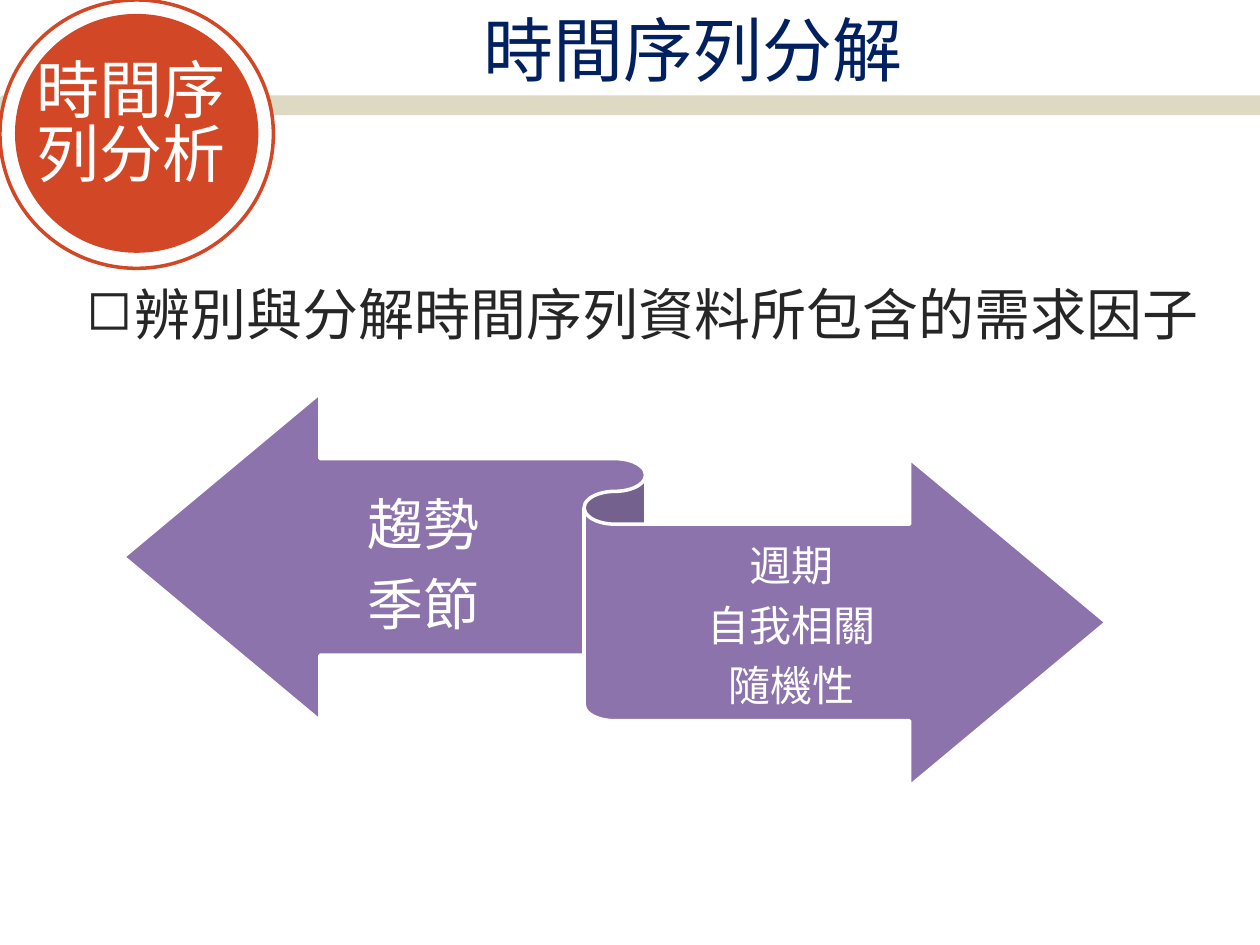
from dataclasses import dataclass

from lxml import etree
from pptx import Presentation
from pptx import util as u
from pptx.dml.color import RGBColor
from pptx.enum import shapes, text
from pptx.oxml.ns import qn


@dataclass(frozen=True)
class Theme:
    """Colours, fonts and type sizes of the slide."""
    white: str = "FFFFFF"
    navy: str = "002060"
    ink: str = "262626"
    purple: str = "8064A2"
    sand: str = "DDD9C3"
    orange: str = "D24726"
    cjk: str = "Noto Sans CJK SC"
    latin: str = "Calibri"
    title: int = 40
    badge: int = 36
    body: int = 32
    small: int = 24
    outline: int = 2


T = Theme()
WIDTH, HEIGHT = 10, 7.5


def part(box, x, y, w, h):
    """Return the box at the given shares of another box."""
    left, top, width, height = box
    return left + x * width, top + y * height, w * width, h * height


def add_text(slide, box, lines, *, size, color, font=T.cjk, align="LEFT", anchor="TOP",
             insets=(0.1, 0.05, 0.1, 0.05), spacing=0.85, after=0, wrap=True, bullet=None):
    """Add a text box with one paragraph for each line."""
    sp = slide.shapes.add_textbox(*map(u.Inches, box))
    tf = sp.text_frame
    tf.word_wrap = wrap
    tf.vertical_anchor = getattr(text.MSO_ANCHOR, anchor)
    tf.margin_left, tf.margin_top, tf.margin_right, tf.margin_bottom = map(u.Inches, insets)
    for i, line in enumerate(lines):
        p = tf.add_paragraph() if i else tf.paragraphs[0]
        p.alignment = getattr(text.PP_ALIGN, align)
        p.line_spacing = spacing
        p.space_after = u.Pt(after * size)
        if bullet:
            pPr = p._p.get_or_add_pPr()
            pPr.set("marL", str(u.Inches(0.38)))
            pPr.set("indent", str(-u.Inches(0.38)))
            etree.SubElement(pPr, qn("a:buChar"), char=bullet)
        r = p.add_run()
        r.text = line
        r.font.size = u.Pt(size)
        r.font.name = font
        r.font.color.rgb = RGBColor.from_string(color)
        etree.SubElement(r._r.get_or_add_rPr(), qn("a:ea"), typeface=font)
    return sp


def add_shape(slide, kind, box, fill, line=None, alpha=None):
    """Add a preset shape with a solid fill and an optional outline."""
    sp = slide.shapes.add_shape(kind, *map(u.Inches, box))
    sp.shadow.inherit = False
    sp.fill.solid()
    sp.fill.fore_color.rgb = RGBColor.from_string(fill)
    if alpha:
        color = sp._element.spPr.find(qn("a:solidFill"))[0]
        etree.SubElement(color, qn("a:alpha"), val=str(alpha * 1000))
    if line:
        sp.line.color.rgb = RGBColor.from_string(line)
        sp.line.width = u.Pt(T.outline)
    else:
        sp.line.fill.background()
    return sp


def add_heading(slide, box):
    """Place the slide title in the box."""
    add_text(slide, box, ["時間序列分解"], size=T.title, color=T.navy,
             align="CENTER", anchor="MIDDLE")


def add_body(slide, box):
    """Place the bulleted statement in the box."""
    add_text(slide, box, ["辨別與分解時間序列資料所包含的需求因子"], size=T.body,
             color=T.ink, bullet="◻")


def add_ribbon(slide, box):
    """Place the two-way ribbon with its two lists of factors."""
    add_shape(slide, shapes.MSO_SHAPE.LEFT_RIGHT_RIBBON, box, T.purple, T.white, alpha=90)
    common = dict(color=T.white, font=T.latin, align="CENTER", anchor="MIDDLE",
                  spacing=0.9, after=0.35)
    add_text(slide, part(box, 0.14, 0.2, 0.33, 0.49), ["趨勢", "季節"],
             size=T.body, insets=(0, 0.12, 0, 0.13), **common)
    add_text(slide, part(box, 0.485, 0.43, 0.39, 0.49), ["週期", "自我相關", "隨機性"],
             size=T.small, insets=(0, 0.09, 0, 0.58), **common)


def add_band(slide, box):
    """Place the rounded band under the title."""
    add_shape(slide, shapes.MSO_SHAPE.ROUNDED_RECTANGLE, box, T.sand)


def add_badge(slide, box):
    """Place the ringed disc with the topic name."""
    oval = shapes.MSO_SHAPE.OVAL
    add_shape(slide, oval, box, T.white, T.orange)
    add_shape(slide, oval, part(box, 0.055, 0.052, 0.89, 0.89), T.orange)
    add_text(slide, part(box, 0.09, 0.207, 0.79, 0.615), ["時間序", "列分析"],
             size=T.badge, color=T.white, wrap=False)


def main():
    """Build and save the slide."""
    prs = Presentation()
    prs.slide_width, prs.slide_height = u.Inches(WIDTH), u.Inches(HEIGHT)
    slide = prs.slides.add_slide(prs.slide_layouts[6])
    page = (0, 0, WIDTH, HEIGHT)
    add_heading(slide, part(page, 0.1, -0.025, 0.9, 1 / 6))
    add_body(slide, part(page, 0.059, 0.3, 0.907, 0.66))
    add_ribbon(slide, part(page, 0.098, 0.416, 0.78, 0.416))
    add_band(slide, part(page, 0, 0.101, 1.024, 0.021))
    add_badge(slide, part(page, 0, 0, 0.217, 0.284))
    prs.save("out.pptx")


if __name__ == "__main__":
    main()
